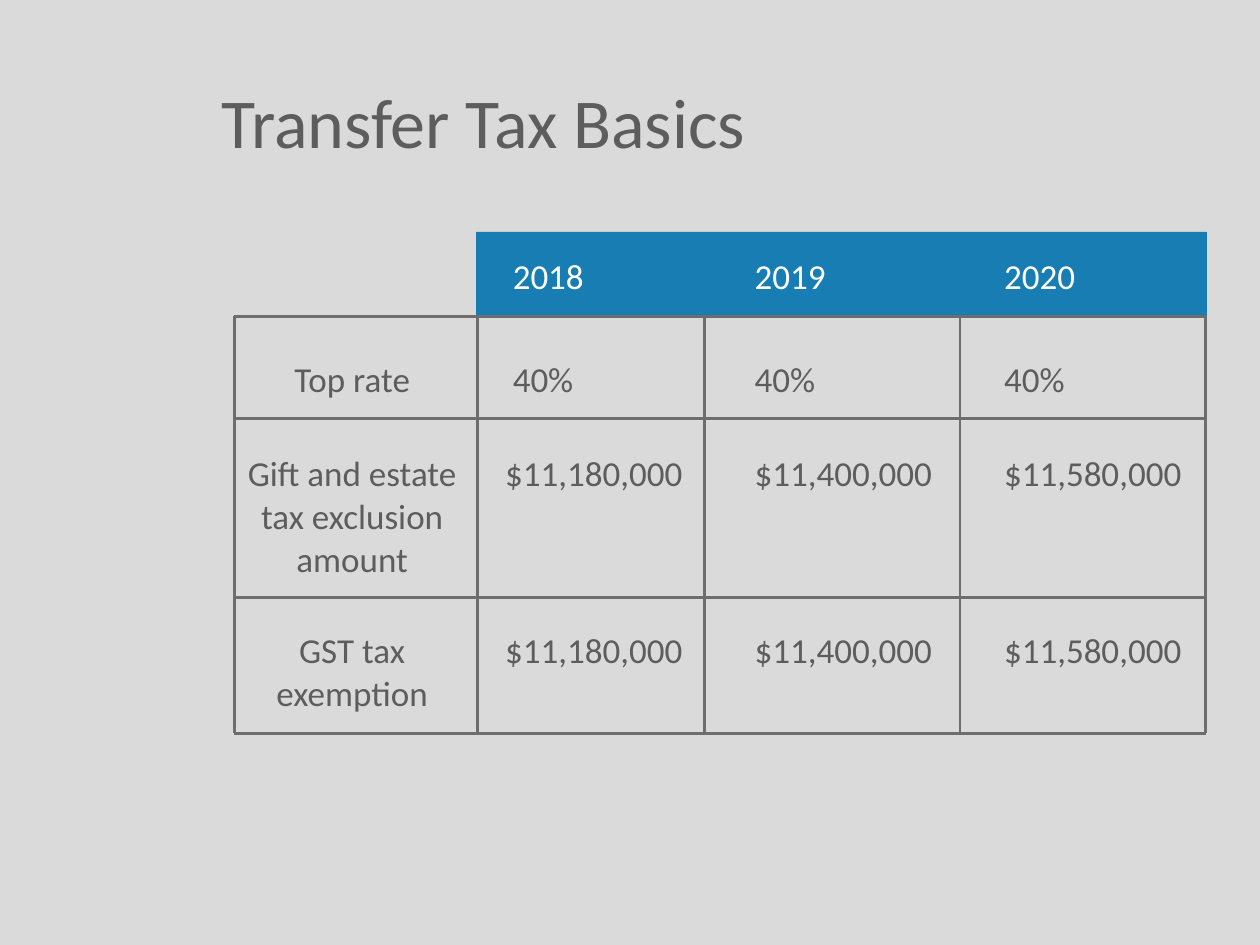
from pptx import Presentation
from pptx.dml.color import RGBColor
from pptx.enum.shapes import MSO_CONNECTOR, MSO_SHAPE
from pptx.enum.text import MSO_ANCHOR, PP_ALIGN
from pptx.oxml.ns import qn
from pptx.util import Inches, Pt
from lxml.etree import SubElement

COLORS = {"bg": "DADADA", "blue": "177DB3", "text": "5D5D5D", "line": "6D6D6D", "white": "FFFFFF"}
FONT = "Calibri"
TITLE = "Transfer Tax Basics"
ROWS = [
    ("", "2018", "2019", "2020"),
    ("Top rate", "40%", "40%", "40%"),
    ("Gift and estate tax exclusion amount", "$11,180,000", "$11,400,000", "$11,580,000"),
    ("GST tax exemption", "$11,180,000", "$11,400,000", "$11,580,000"),
]
COL_WIDTHS = [1.99, 1.98, 1.98, 1.97]
ROW_HEIGHTS = [0.82, 0.75, 1.4, 1.3]
GRID_X = [1.86, 3.79, 5.59, 7.62, 9.57]
GRID_Y = [2.51, 3.32, 4.74, 5.82]
NO_GRID_STYLE = "{2D5ABB26-0587-4C30-8999-92F81FD0307C}"


def rgb(name):
    return RGBColor.from_string(COLORS[name])


def style(p, size, color, align):
    p.alignment = align
    for r in p.runs:
        r.font.name = FONT
        r.font.size = Pt(size)
        r.font.color.rgb = rgb(color)


def add_header_band(s):
    sp = s.shapes.add_shape(MSO_SHAPE.RECTANGLE, Inches(3.78), Inches(1.84), Inches(5.8), Inches(0.67))
    sp.shadow.inherit = False
    sp.fill.solid()
    sp.fill.fore_color.rgb = rgb("blue")
    sp.line.fill.background()


def add_title(s):
    sp = s.shapes.title
    sp.left, sp.top, sp.width, sp.height = (Inches(v) for v in (1.66, 0.59, 7.34, 0.74))
    tf = sp.text_frame
    tf.text = TITLE
    tf.vertical_anchor = MSO_ANCHOR.MIDDLE
    style(tf.paragraphs[0], 40, "text", PP_ALIGN.LEFT)


def add_tax_table(s):
    frame = s.shapes.add_table(len(ROWS), len(COL_WIDTHS), Inches(1.8), Inches(1.98),
                               Inches(sum(COL_WIDTHS)), Inches(sum(ROW_HEIGHTS)))
    table = frame.table
    table.first_row = table.horz_banding = False
    table._tbl.tblPr.find(qn("a:tableStyleId")).text = NO_GRID_STYLE
    for col, width in zip(table.columns, COL_WIDTHS):
        col.width = Inches(width)
    for i, (row, height) in enumerate(zip(ROWS, ROW_HEIGHTS)):
        table.rows[i].height = Inches(height)
        for j, text in enumerate(row):
            cell = table.cell(i, j)
            cell.fill.background()
            cell.text = text
            if j:
                cell.margin_left = Inches(0.28 if j == 1 and i < 2 else 0.22)
            style(cell.text_frame.paragraphs[0], 20, "text" if i else "white",
                  PP_ALIGN.LEFT if j else PP_ALIGN.CENTER)


def add_line(s, x1, y1, x2, y2):
    line = s.shapes.add_connector(MSO_CONNECTOR.STRAIGHT, *(Inches(v) for v in (x1, y1, x2, y2)))
    line.line.color.rgb = rgb("line")
    line.line.width = Pt(1.5)
    SubElement(line._element.spPr, qn("a:effectLst"))


def main():
    prs = Presentation()
    prs.slide_width, prs.slide_height = Inches(10), Inches(7.5)
    s = prs.slides.add_slide(prs.slide_layouts[5])
    s.background.fill.solid()
    s.background.fill.fore_color.rgb = rgb("bg")
    add_header_band(s)
    add_title(s)
    add_tax_table(s)
    for x in GRID_X:
        add_line(s, x, GRID_Y[0], x, GRID_Y[-1])
    for y in GRID_Y:
        add_line(s, GRID_X[0], y, GRID_X[-1], y)
    prs.save("out.pptx")


if __name__ == "__main__":
    main()
